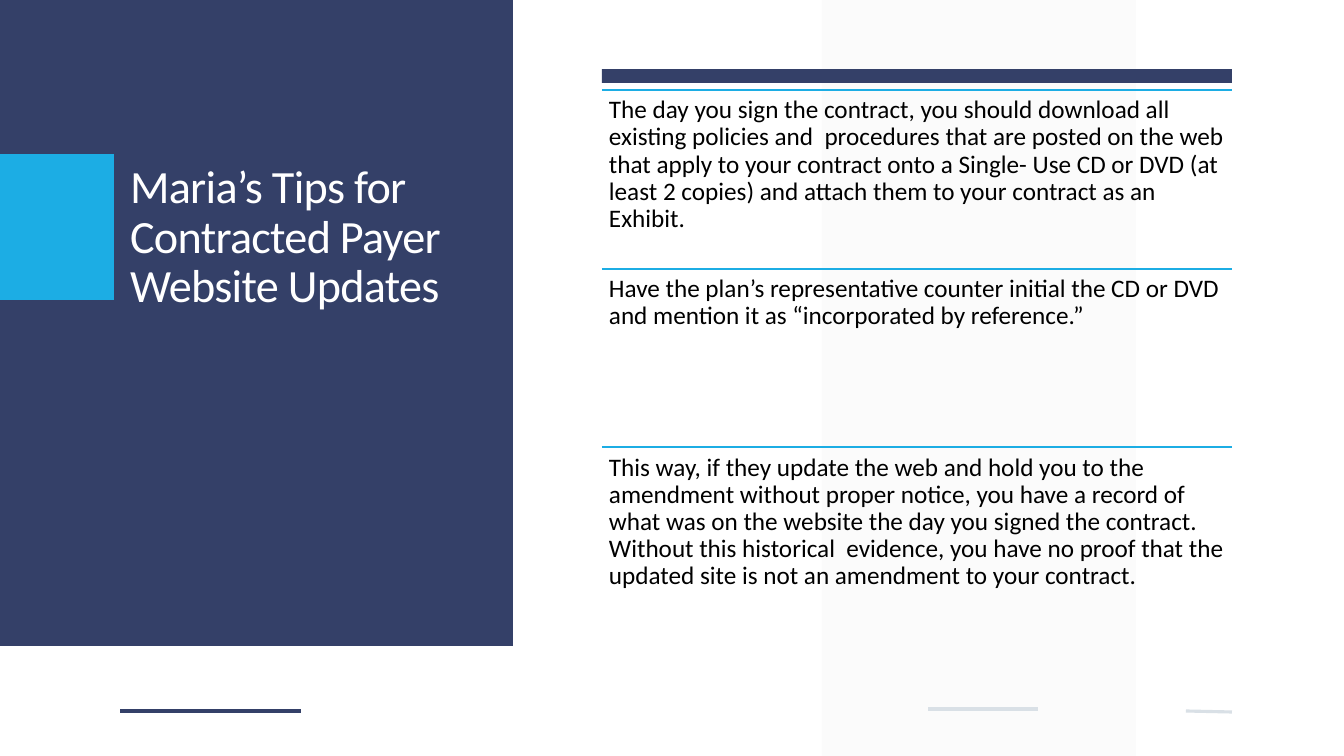
from pptx import Presentation
from pptx.dml.color import RGBColor
from pptx.enum.shapes import MSO_CONNECTOR, MSO_SHAPE
from pptx.enum.text import MSO_ANCHOR, MSO_AUTO_SIZE, PP_ALIGN
from pptx.oxml.ns import qn
from pptx.util import Pt
from lxml.etree import SubElement

EMU_PER_PX = 12192000 / 1344
NAVY, CYAN, MIST, PALE = "344068", "1CADE4", "D9E0E6", "F2F2F2"
TITLE = "Maria’s Tips for Contracted Payer\vWebsite Updates"
TIPS = [
    "The day you sign the contract, you should download all existing policies and  "
    "procedures that are posted on the web that apply to your contract onto a Single- "
    "Use CD or DVD (at least 2 copies) and attach them to your contract as an Exhibit.",
    "Have the plan’s representative counter initial the CD or DVD and mention it as "
    "“incorporated by reference.”",
    "This way, if they update the web and hold you to the amendment without proper "
    "notice, you have a record of what was on the website the day you signed the "
    "contract.  Without this historical  evidence, you have no proof that the updated "
    "site is not an amendment to your contract.",
]
TIPS_LEFT, TIPS_TOP, TIPS_WIDTH, TIPS_HEIGHT = 602, 90, 630, 536


def px(*lengths):
    return [round(length * EMU_PER_PX) for length in lengths]


def color(hex_string):
    return RGBColor.from_string(hex_string)


def set_attributes(target, values):
    for name, value in values.items():
        setattr(target, name, value)


def add_block(slide, box, fill, kind=MSO_SHAPE.RECTANGLE):
    shape = slide.shapes.add_shape(kind, *px(*box))
    shape.shadow.inherit = False
    shape.fill.solid()
    shape.fill.fore_color.rgb = color(fill)
    shape.line.fill.background()
    return shape


def add_band(slide, box, fill, opacity):
    """Add a translucent, straight-sided parallelogram."""
    band = add_block(slide, box, fill, MSO_SHAPE.PARALLELOGRAM)
    band.adjustments[0] = 0
    fill_color = band.fill._xPr.find(qn("a:solidFill"))[0]
    SubElement(fill_color, qn("a:alpha")).set("val", str(opacity * 1000))


def add_rule(slide, ends, stroke, width):
    rule = slide.shapes.add_connector(MSO_CONNECTOR.STRAIGHT, *px(*ends))
    rule.line.color.rgb = color(stroke)
    rule.line.width = Pt(width)
    SubElement(rule._element.spPr, qn("a:effectLst"))


def write_text(shape, text, size, font_color, frame_format):
    set_attributes(shape.text_frame, {
        "word_wrap": True, "auto_size": MSO_AUTO_SIZE.NONE, **frame_format})
    paragraph = shape.text_frame.paragraphs[0]
    paragraph.text = text
    set_attributes(paragraph, {"line_spacing": 0.9, "alignment": PP_ALIGN.LEFT})
    for run in paragraph.runs:
        set_attributes(run.font, {"name": "Calibri", "size": Pt(size)})
        run.font.color.rgb = color(font_color)
    return paragraph


def add_title(slide):
    title = slide.shapes.title
    slide.shapes._spTree.append(title._element)  # in front of the navy panel
    left, top, width, height = px(120, 87, 339, 231)
    set_attributes(title, {"left": left, "top": top, "width": width, "height": height})
    paragraph = write_text(title, TITLE, 33, "FFFFFF",
                           {"vertical_anchor": MSO_ANCHOR.BOTTOM})
    for run in paragraph.runs:
        run.font._element.set("spc", "-50")


def add_tip(slide, top, height, text):
    add_rule(slide, (TIPS_LEFT, top, TIPS_LEFT + TIPS_WIDTH, top), CYAN, 1.25)
    box = slide.shapes.add_textbox(*px(TIPS_LEFT, top, TIPS_WIDTH, height))
    inset = px(7)[0]
    margins = {f"margin_{side}": inset for side in ("left", "top", "right", "bottom")}
    write_text(box, text, 18, "000000", margins)


def main():
    presentation = Presentation()
    presentation.slide_width, presentation.slide_height = px(1344, 756)
    slide = presentation.slides.add_slide(presentation.slide_layouts[5])

    add_band(slide, (822, 0, 314, 756), PALE, 30)
    add_block(slide, (0, 0, 513, 646), NAVY)
    add_block(slide, (0, 154, 114, 146), CYAN)
    add_block(slide, (602, 69, 630, 14), NAVY)
    for ends, stroke in [((301, 711, 120, 711), NAVY),
                         ((1038, 709, 928, 709), MIST),
                         ((1232, 712, 1186, 711), MIST)]:
        add_rule(slide, ends, stroke, 2.25)

    add_title(slide)
    row_height = TIPS_HEIGHT / len(TIPS)
    for index, tip in enumerate(TIPS):
        add_tip(slide, TIPS_TOP + index * row_height, row_height, tip)

    presentation.save("out.pptx")


if __name__ == "__main__":
    main()
